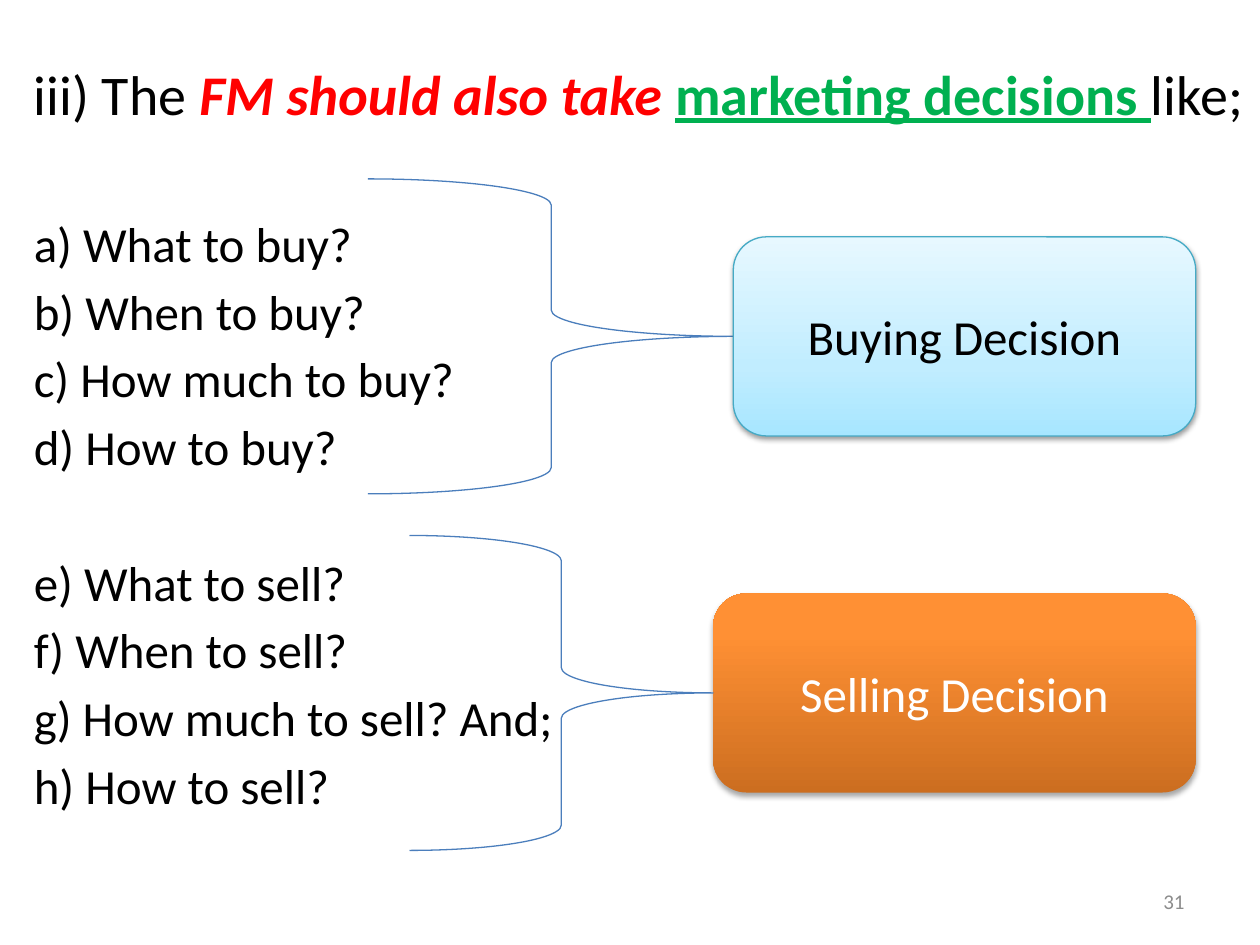
from lxml import etree
from pptx import Presentation
from pptx.dml.color import RGBColor
from pptx.enum.shapes import MSO_SHAPE as Shape
from pptx.enum.text import MSO_ANCHOR as Anchor, PP_ALIGN as Align
from pptx.oxml.ns import qn
from pptx.util import Inches, Pt

BLACK, WHITE, GREY = "000000", "FFFFFF", "8C8C8C"
RED, GREEN = "FF0000", "00B050"
BRACE_BLUE, BOX_TEAL = "4B7EBC", "46AAC5"
BLUE_STOPS = [(0, "A7E6FF"), (35, "C1EDFF"), (100, "E7F8FF")]
ORANGE_STOPS = [(0, "CC6E20"), (80, "FF9034"), (100, "FF9136")]

LINE_GAP = 5
BUYING = ["a) What to buy?", "b) When to buy?", "c) How much to buy?", "d) How to buy?"]
SELLING = ["e) What to sell?", "f) When to sell?", "g) How much to sell? And;", "h) How to sell?"]


def rgb(hex_color):
    return RGBColor.from_string(hex_color)


def add_color(parent, hex_color):
    return etree.SubElement(parent, qn("a:srgbClr"), val=hex_color)


class SlideBuilder:
    font_name = "Calibri"
    text_size = 28

    def __init__(self, slide):
        self.slide = slide

    def style(self, font, size, color):
        font.name = self.font_name
        font.size = Pt(size)
        font.color.rgb = rgb(color)

    def text_frame(self, left, top, width, height, anchor=Anchor.TOP):
        box = self.slide.shapes.add_textbox(
            Inches(left), Inches(top), Inches(width), Inches(height))
        frame = box.text_frame
        frame.word_wrap = True
        frame.vertical_anchor = anchor
        return frame

    def heading(self, paragraph, parts):
        """Fill a paragraph with (text, colour, bold, italic, underline) parts."""
        for text, color, bold, italic, underline in parts:
            run = paragraph.add_run()
            run.text = text
            self.style(run.font, 32, color)
            run.font.bold = bold
            run.font.italic = italic
            run.font.underline = underline

    def questions(self, frame, lines, gap_above):
        for index, line in enumerate(lines):
            paragraph = frame.add_paragraph()
            paragraph.text = line
            paragraph.space_before = Pt(LINE_GAP if index else gap_above)
            self.style(paragraph.font, self.text_size, BLACK)

    def outlined_shape(self, kind, left, top, width, height, line_color):
        shape = self.slide.shapes.add_shape(
            kind, Inches(left), Inches(top), Inches(width), Inches(height))
        shape.shadow.inherit = False
        if line_color:
            shape.line.color.rgb = rgb(line_color)
            shape.line.width = Pt(0.75)
        else:
            shape.line.fill.background()
        return shape

    def brace(self, left, top, width, height):
        brace = self.outlined_shape(Shape.RIGHT_BRACE, left, top, width, height, BRACE_BLUE)
        brace.fill.background()

    def decision(self, label, left, top, width, height, stops, text_color,
                 line_color, shadow_alpha, shadow_distance):
        box = self.outlined_shape(Shape.ROUNDED_RECTANGLE, left, top, width, height, line_color)
        self.gradient(box, stops)
        self.drop_shadow(box, shadow_alpha, shadow_distance)
        frame = box.text_frame
        frame.word_wrap = True
        frame.vertical_anchor = Anchor.MIDDLE
        paragraph = frame.paragraphs[0]
        paragraph.text = label
        paragraph.alignment = Align.CENTER
        self.style(paragraph.font, self.text_size, text_color)

    def gradient(self, shape, stops):
        """Shade the shape from its bottom edge upwards."""
        shape.fill.gradient()
        shape.fill.gradient_angle = 90
        stop_list = shape.element.spPr.find(qn("a:gradFill")).find(qn("a:gsLst"))
        for old_stop in list(stop_list):
            stop_list.remove(old_stop)
        for percent, color in stops:
            add_color(etree.SubElement(stop_list, qn("a:gs"), pos=str(percent * 1000)), color)

    def drop_shadow(self, shape, alpha, distance):
        effects = shape.element.spPr.find(qn("a:effectLst"))
        shadow = etree.SubElement(
            effects, qn("a:outerShdw"), blurRad=str(Pt(3.1)), dist=str(Pt(distance)),
            dir="5400000", rotWithShape="0")
        etree.SubElement(add_color(shadow, BLACK), qn("a:alpha"), val=str(alpha * 1000))

    def page_number(self, number):
        paragraph = self.text_frame(7.17, 6.95, 2.33, 0.4, Anchor.MIDDLE).paragraphs[0]
        paragraph.text = str(number)
        paragraph.alignment = Align.RIGHT
        self.style(paragraph.font, 12, GREY)


def main():
    deck = Presentation()
    deck.slide_width, deck.slide_height = Inches(10), Inches(7.5)
    builder = SlideBuilder(deck.slides.add_slide(deck.slide_layouts[6]))

    body = builder.text_frame(0.17, 0.42, 9.83, 6.83)
    builder.heading(body.paragraphs[0], [
        ("iii) The ", BLACK, False, False, False),
        ("FM should also take ", RED, True, True, False),
        ("marketing decisions", GREEN, True, False, True),
        (" ", GREEN, False, False, True),
        ("like;", BLACK, False, False, False),
    ])
    builder.questions(body, BUYING, gap_above=50)
    builder.questions(body, SELLING, gap_above=44)

    builder.brace(2.92, 1.42, 2.91, 2.5)
    builder.decision("Buying Decision", 5.82, 1.88, 3.67, 1.58, BLUE_STOPS, BLACK,
                     BOX_TEAL, shadow_alpha=38, shadow_distance=1.6)
    builder.decision("Selling Decision", 5.66, 4.71, 3.83, 1.58, ORANGE_STOPS, WHITE,
                     None, shadow_alpha=35, shadow_distance=1.8)
    builder.brace(3.25, 4.25, 2.41, 2.5)
    builder.page_number(31)

    deck.save("out.pptx")


if __name__ == "__main__":
    main()
